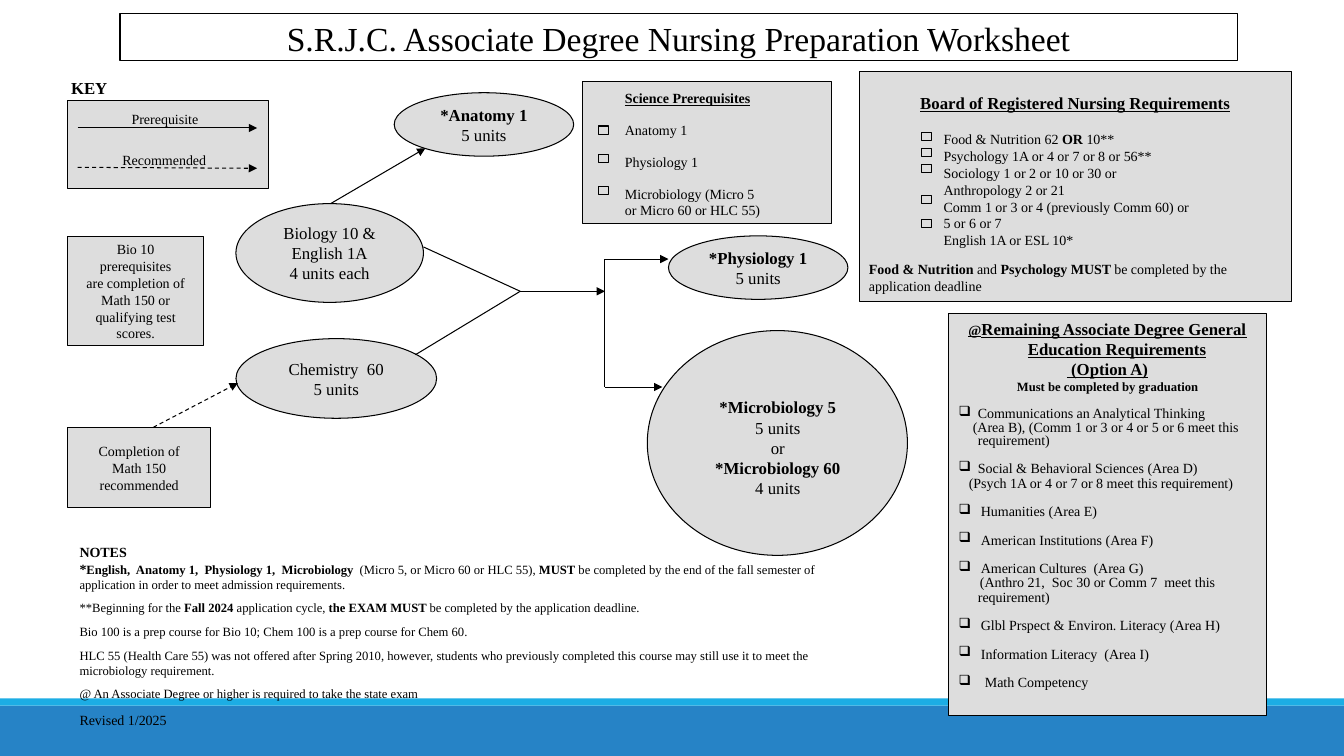
import pptx
import pptx.util
import pptx.dml.color
import pptx.enum.dml
import pptx.enum.shapes
import pptx.enum.text
import pptx.oxml
import pptx.oxml.ns

Inches, Pt = pptx.util.Inches, pptx.util.Pt
RGBColor = pptx.dml.color.RGBColor
SHAPE = pptx.enum.shapes.MSO_SHAPE
ALIGN = pptx.enum.text.PP_ALIGN
ANCHOR = pptx.enum.text.MSO_ANCHOR

BLACK = RGBColor(0x00, 0x00, 0x00)
GRAY = RGBColor(0xDD, 0xDD, 0xDD)
BLUE = RGBColor(0x26, 0x83, 0xC6)
CYAN = RGBColor(0x1C, 0xAD, 0xE4)
FONT = "Times New Roman"
LEADING = 1.2  # line height per point of text size

# Content: a paragraph is a string or a dict; "|" switches bold on and off
TITLE = ["S.R.J.C. Associate Degree Nursing Preparation Worksheet"]

COURSES = [
    ((2.34, 2.02, 1.86, 0.98), ["Biology 10 &", "English 1A", "4 units each"]),
    ((2.34, 3.36, 1.99, 0.79), ["Chemistry  60", "5 units"]),
    ((3.91, 0.92, 1.78, 0.63), ["|*Anatomy 1|", "5 units"]),
    ((6.63, 2.34, 1.78, 0.63), ["|*Physiology 1|", "5 units"]),
    ((6.42, 3.28, 2.58, 2.23), []),
]
MICROBIOLOGY = ["|*Microbiology 5|", "5 units", "or", "|*Microbiology 60|", "4 units"]

ADVICE = [
    ((0.67, 4.24, 1.42, 0.8), ["Completion of", "Math 150", "recommended"]),
    ((0.67, 2.35, 1.35, 1.08), ["Bio 10", "prerequisites", "are completion of",
                                "Math 150 or", "qualifying test", "scores."]),
]

KEY_LABELS = [
    ((0.53, 0.72, 0.71, 0.28), "|KEY|", 12),
    ((1.09, 1.05, 1.09, 0.25), "Prerequisite", 10),
    ((0.98, 1.45, 1.3, 0.25), "Recommended", 10),
]

SCIENCE = [
    {"text": "|Science Prerequisites|", "underline": True},
    {"text": "Anatomy 1", "before": 11.4},
    {"text": "Physiology 1", "before": 11.4},
    {"text": "Microbiology (Micro 5", "before": 11.4},
    "or Micro 60 or HLC 55)",
]

BOARD = [
    {"text": "|Board of Registered Nursing Requirements|", "size": 12, "line": 11.5,
     "underline": True, "align": ALIGN.CENTER},
    {"text": "|Food & Nutrition| and |Psychology MUST |be completed by the application deadline",
     "before": 105.6},
]
BOARD_COURSES = [
    "Food & Nutrition 62 |OR| 10**",
    "Psychology 1A or 4 or 7 or 8 or 56**",
    "Sociology 1 or 2 or 10 or 30 or",
    "Anthropology 2 or 21",
    "Comm 1 or 3 or 4 (previously Comm 60) or",
    "5 or 6 or 7",
    "English 1A or ESL 10*",
]

HEADING = {"size": 12, "line": 14.4, "underline": True, "align": ALIGN.CENTER,
           "left": 0.19, "first": -0.19}
ITEM = {"bullet": "❑", "left": 0.22, "first": -0.22, "before": 10.2}
GENERAL_EDUCATION = [
    {**HEADING, "text": "|@Remaining Associate Degree General Education Requirements|",
     "lead_size": 10},
    {**HEADING, "text": "| (Option A)|"},
    {**HEADING, "text": "|Must be completed by graduation|", "size": 9, "line": 10.8,
     "underline": False},
    {**ITEM, "text": "Communications an Analytical Thinking", "left": 0.19, "first": -0.19,
     "before": 9.6},
    {"text": "(Area B), (Comm 1 or 3 or 4 or 5 or 6 meet this requirement)",
     "left": 0.19, "first": -0.05, "line": 9.5},
    {**ITEM, "text": "Social & Behavioral Sciences (Area D)", "left": 0.19, "first": -0.19},
    {"text": "(Psych 1A or 4 or 7 or 8 meet this requirement)", "left": 0.19, "first": -0.09},
    {**ITEM, "text": "Humanities (Area E)"},
    {**ITEM, "text": "American Institutions (Area F)"},
    {**ITEM, "text": "American Cultures  (Area G)"},
    {"text": "(Anthro 21,  Soc 30 or Comm 7  meet this requirement)", "left": 0.19, "first": 0.02},
    {**ITEM, "text": "Glbl Prspect & Environ. Literacy (Area H)"},
    {**ITEM, "text": "Information Literacy  (Area I)"},
    {**ITEM, "text": "Math Competency", "left": 0.26, "first": -0.26},
]

NOTES = [
    {"text": "|NOTES|", "size": 10, "line": 12},
    {"text": "|*English,  Anatomy 1,  Physiology 1,  Microbiology  |(Micro 5, or Micro 60 or HLC 55), "
             "|MUST| be completed by the end of the fall semester of application in order to meet "
             "admission requirements.", "lead_size": 10, "before": 1.2},
    {"text": "**Beginning for the |Fall 2024 |application cycle, |the EXAM MUST |be completed by "
             "the application deadline.", "before": 6},
    {"text": "Bio 100 is a prep course for Bio 10; Chem 100 is a prep course for Chem 60.", "before": 6},
    {"text": "HLC 55 (Health Care 55) was not offered after Spring 2010, however, students who "
             "previously completed this course may still use it to meet the microbiology "
             "requirement.", "before": 6},
    {"text": "@ An Associate Degree or higher is required to take the state exam", "before": 6},
    {"text": "Revised 1/2025", "size": 10, "line": 12, "before": 7.2},
]

# Lines: start, end, arrowhead, dashed
LINES = [
    ((0.77, 1.27), (2.55, 1.27), True, False),
    ((0.77, 1.66), (2.55, 1.67), True, True),
    ((1.52, 4.24), (2.36, 3.8), True, True),
    ((3.28, 2.02), (4.22, 1.47), True, False),
    ((4.2, 2.45), (5.16, 2.89), False, False),
    ((4.12, 3.52), (5.16, 2.89), False, False),
    ((5.16, 2.89), (6, 2.89), True, False),
    ((6, 2.57), (6, 3.84), False, False),
    ((6, 2.57), (6.63, 2.57), True, False),
    ((6, 3.84), (6.57, 3.84), True, False),
]

# Checkbox columns: left edge and the top of each box
CHECKBOXES = [(5.94, (1.25, 1.53, 1.85)), (9.14, (1.31, 1.47, 1.63, 1.94, 2.18))]

presentation = pptx.Presentation()
presentation.slide_width, presentation.slide_height = Inches(13.33), Inches(7.5)
slide = presentation.slides.add_slide(presentation.slide_layouts[6])


def add_box(place, fill=GRAY, kind=SHAPE.RECTANGLE, outlined=True):
    shape = slide.shapes.add_shape(kind, *map(Inches, place))
    shape.shadow.inherit = False
    if fill is None:
        shape.fill.background()
    else:
        shape.fill.solid()
        shape.fill.fore_color.rgb = fill
    if outlined:
        shape.line.color.rgb = BLACK
        shape.line.width = Pt(0.75)
    else:
        shape.line.fill.background()
    return shape


def write(shape, content, size=10, align=ALIGN.LEFT, anchor=ANCHOR.TOP, wrap=True,
          top=0.05, scale=1):
    frame = shape.text_frame
    frame.word_wrap, frame.vertical_anchor = wrap, anchor
    frame.margin_left = frame.margin_right = Inches(0.1)
    frame.margin_top, frame.margin_bottom = Inches(top), Inches(0.05)
    for number, entry in enumerate(content):
        entry = {"text": entry} if isinstance(entry, str) else entry
        paragraph = frame.paragraphs[0] if number == 0 else frame.add_paragraph()
        points = entry.get("size", size)
        paragraph.alignment = entry.get("align", align)
        paragraph.line_spacing = Pt(entry.get("line", points * LEADING * scale))
        paragraph.space_before = Pt(entry.get("before", 0))
        properties = paragraph._p.get_or_add_pPr()
        if "left" in entry:
            properties.set("marL", str(Inches(entry["left"])))
            properties.set("indent", str(Inches(entry["first"])))
        if "bullet" in entry:
            bullet = pptx.oxml.parse_xml(f'<a:buChar {pptx.oxml.ns.nsdecls("a")} char="{entry["bullet"]}"/>')
            properties.append(bullet)
        # Odd pieces between bars are bold; a lead character may have its own size
        pieces = [(piece, part % 2 == 1, points)
                  for part, piece in enumerate(entry["text"].split("|")) if piece]
        if "lead_size" in entry:
            piece, bold, _ = pieces[0]
            pieces[:1] = [(piece[0], bold, entry["lead_size"]), (piece[1:], bold, points)]
        for piece, bold, piece_size in pieces:
            run = paragraph.add_run()
            run.text = piece
            run.font.name, run.font.size, run.font.bold = FONT, Pt(piece_size), bold
            run.font.underline = entry.get("underline", False)
            run.font.color.rgb = BLACK


def add_text(place, content, **options):
    write(slide.shapes.add_textbox(*map(Inches, place)), content, **options)


def add_line(start, end, arrow, dashed):
    line = slide.shapes.add_connector(pptx.enum.shapes.MSO_CONNECTOR.STRAIGHT,
                                      *map(Inches, start + end))
    line.line.color.rgb = BLACK
    line.line.width = Pt(0.75)
    if dashed:
        line.line.dash_style = pptx.enum.dml.MSO_LINE.DASH
    namespace = pptx.oxml.ns.nsdecls("a")
    if arrow:
        line.line._get_or_add_ln().append(
            pptx.oxml.parse_xml(f'<a:tailEnd {namespace} type="triangle"/>'))
    line._element.spPr.append(pptx.oxml.parse_xml(f"<a:effectLst {namespace}/>"))


# Footer bands and title
add_box((0, 7, 13.33, 0.5), BLUE, outlined=False)
add_box((0, 6.93, 13.33, 0.07), CYAN, outlined=False)
write(add_box((1.19, 0.13, 11.08, 0.47), None), TITLE, size=24, align=ALIGN.CENTER)

# Key
add_box((0.67, 1, 1.99, 0.87))
for place, label, size in KEY_LABELS:
    add_text(place, [label], size=size, align=ALIGN.CENTER, wrap=False)

# Course flow
centered = {"align": ALIGN.CENTER, "anchor": ANCHOR.MIDDLE, "wrap": False}
for place, content in COURSES:
    write(add_box(place, kind=SHAPE.OVAL), content, size=12, **centered)
add_text((6.58, 3.69, 2.27, 1.98), MICROBIOLOGY, size=12, align=ALIGN.CENTER, top=0.25)
for place, content in ADVICE:
    write(add_box(place), content, **centered)
for line in LINES:
    add_line(*line)

# Requirement panels
add_box((5.78, 0.81, 2.47, 1.41))
write(add_box((6.1, 0.85, 1.94, 1.29), outlined=False), SCIENCE, wrap=False, scale=0.95)
write(add_box((8.52, 0.71, 4.29, 2.28)), BOARD, top=0.25)
add_text((9.26, 1.25, 3.39, 1.2), BOARD_COURSES, wrap=False)
write(add_box((9.41, 3.11, 3.15, 3.99)), GENERAL_EDUCATION, scale=0.85)
for left, tops in CHECKBOXES:
    for top in tops:
        add_box((left, top, 0.1, 0.08))

# Notes
add_text((0.69, 5.34, 8.05, 1.95), NOTES, size=9)

presentation.save("out.pptx")
